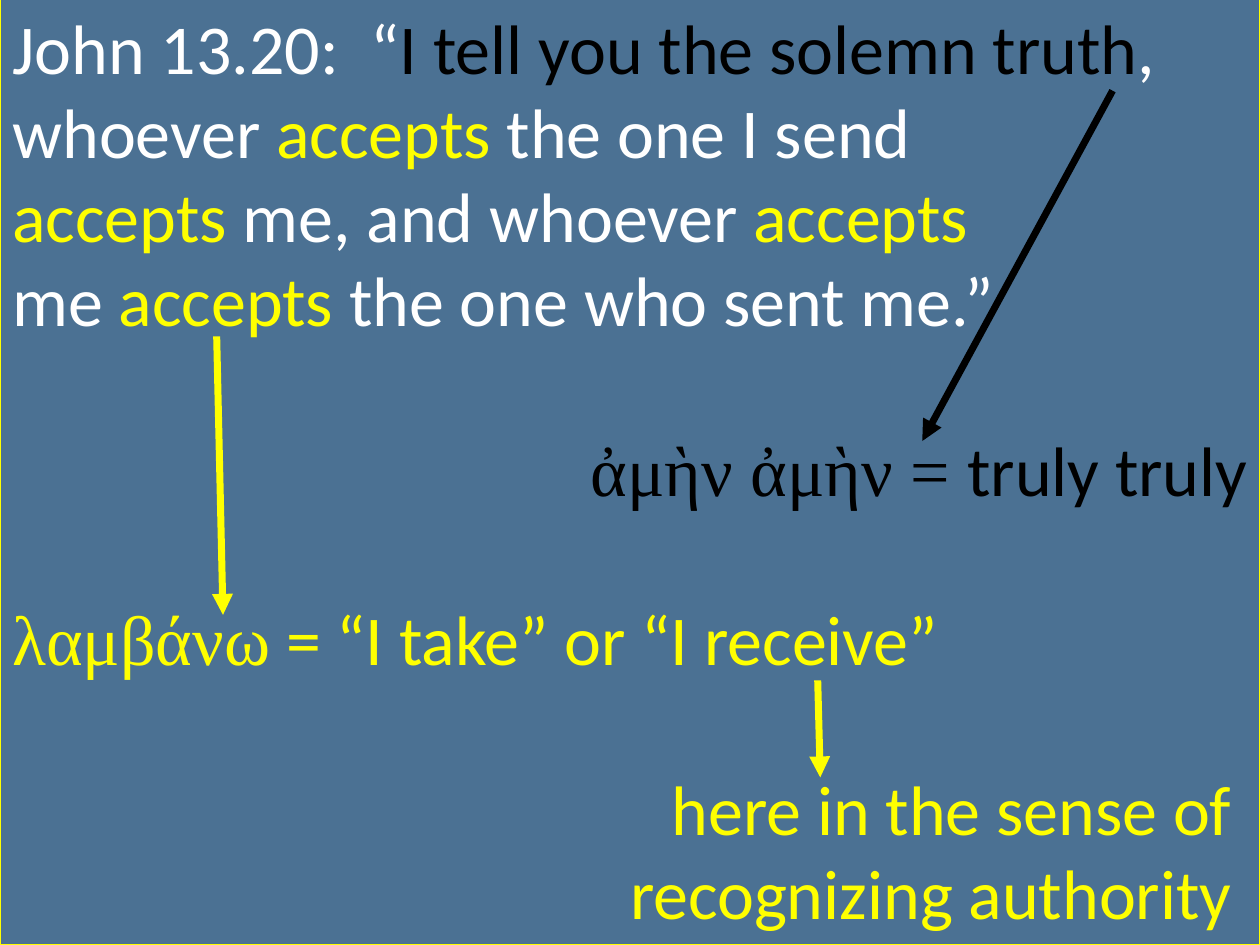
"""Build a Bible study slide on the wording of John 13.20."""
from dataclasses import dataclass

import pptx
import pptx.dml.color
import pptx.enum.dml
import pptx.enum.shapes
import pptx.enum.text
import pptx.oxml
import pptx.oxml.ns
import pptx.util
from pptx.util import Inches, Pt


@dataclass(frozen=True)
class Theme:
    """Colours, fonts and sizes used on the slide."""
    white: str = "FFFFFF"
    black: str = "000000"
    yellow: str = "FFFF00"
    panel: str = "1F4E79"
    panel_alpha: int = 80
    font: str = "Calibri"
    greek_font: str = "Times New Roman"
    size: float = 40
    line_gap: float = 48.8
    arrow_width: float = 4


T = Theme()
LEFT = pptx.enum.text.PP_ALIGN.LEFT
RIGHT = pptx.enum.text.PP_ALIGN.RIGHT

PARAGRAPHS = [
    (LEFT, 0, [("John 13.20:  “", T.white), ("I tell you the solemn truth", T.black),
               (", whoever ", T.white), ("accepts", T.yellow),
               (" the one I send", T.white)]),
    (LEFT, 0, [("accepts ", T.yellow), ("me, and whoever ", T.white),
               ("accepts", T.yellow)]),
    (LEFT, 0, [("me ", T.white), ("accepts", T.yellow),
               (" the one who sent me.”", T.white)]),
    (RIGHT, 1, [("ἀμὴν ἀμὴν = ", T.black, T.greek_font), ("truly truly", T.black)]),
    (LEFT, 1, [("λαμβάνω", T.yellow, T.greek_font),
               (" = “I take” or “I receive”", T.yellow)]),
    (RIGHT, 1, [("here in the sense of ", T.yellow)]),
    (RIGHT, 0, [("recognizing authority ", T.yellow)]),
]

ARROWS = [
    ((8.83, 0.72), (7.32, 3.5), T.black),
    ((1.72, 2.67), (1.77, 4.88), T.yellow),
    ((6.49, 5.4), (6.51, 6.17), T.yellow),
]


def rgb(code):
    """Return the colour object for a hex code."""
    return pptx.dml.color.RGBColor.from_string(code)


def add_child(parent, tag, **attrs):
    """Append a drawing element with the given attributes."""
    child = pptx.oxml.parse_xml(f"<{tag} {pptx.oxml.ns.nsdecls('a')}/>")
    for name, value in attrs.items():
        child.set(name, str(value))
    parent.append(child)


def add_panel(s):
    """Add the translucent panel that fills the slide."""
    sp = s.shapes.add_shape(pptx.enum.shapes.MSO_SHAPE.RECTANGLE,
                            Inches(0), Inches(-0.01), Inches(10), Inches(7.51))
    sp.shadow.inherit = False
    sp.fill.solid()
    sp.fill.fore_color.rgb = rgb(T.panel)
    color = sp.fill._xPr.find(".//" + pptx.oxml.ns.qn("a:srgbClr"))
    add_child(color, "a:alpha", val=T.panel_alpha * 1000)
    sp.line.color.rgb = rgb(T.yellow)
    sp.line.width = Pt(0.75)
    return sp


def add_text(tf, paragraphs):
    """Write the coloured runs of each paragraph."""
    tf.word_wrap = True
    tf.vertical_anchor = pptx.enum.text.MSO_ANCHOR.TOP
    for i, (align, gap_lines, runs) in enumerate(paragraphs):
        p = tf.add_paragraph() if i else tf.paragraphs[0]
        p.alignment = align
        p.space_before = Pt(gap_lines * T.line_gap)
        p.font.size = Pt(T.size)
        p.font.name = T.font
        for text, color, *font in runs:
            r = p.add_run()
            r.text = text
            r.font.color.rgb = rgb(color)
            if font:
                r.font.name = font[0]


def add_arrow(s, start, end, color):
    """Add a straight arrow from start to end."""
    cxn = s.shapes.add_connector(pptx.enum.shapes.MSO_CONNECTOR.STRAIGHT,
                                 *map(Inches, start + end))
    cxn.line.color.rgb = rgb(color)
    cxn.line.width = Pt(T.arrow_width)
    add_child(cxn.line._get_or_add_ln(), "a:tailEnd", type="triangle")
    add_child(cxn._element.spPr, "a:effectLst")


def main():
    """Build and save the slide."""
    prs = pptx.Presentation()
    prs.slide_width, prs.slide_height = Inches(10), Inches(7.5)
    s = prs.slides.add_slide(prs.slide_layouts[6])
    add_text(add_panel(s).text_frame, PARAGRAPHS)
    for start, end, color in ARROWS:
        add_arrow(s, start, end, color)
    prs.save("out.pptx")


if __name__ == "__main__":
    main()
